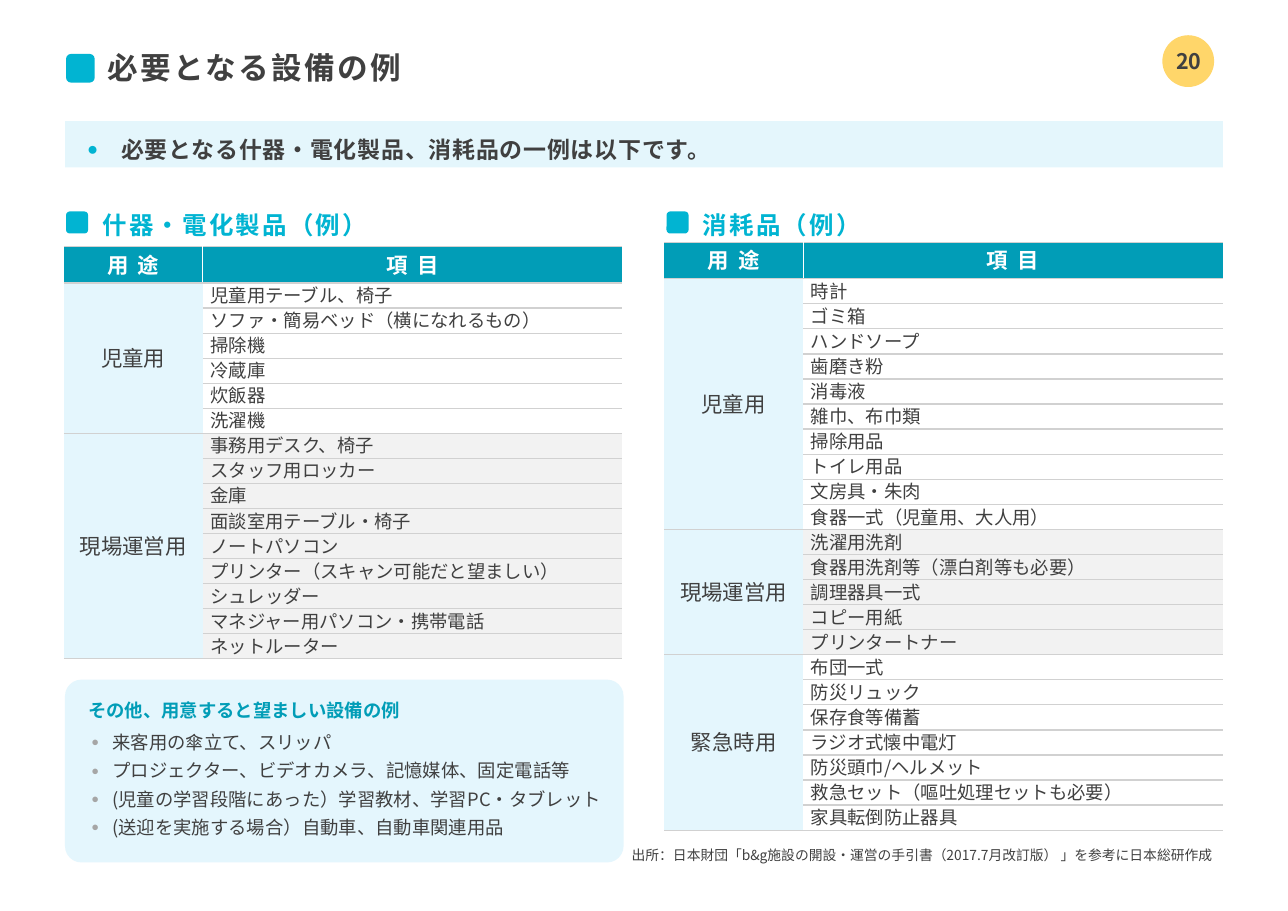
from dataclasses import dataclass
from typing import Optional

from lxml.etree import SubElement
from pptx import Presentation
from pptx.dml.color import RGBColor
from pptx.enum.shapes import MSO_SHAPE as Shape
from pptx.enum.text import MSO_ANCHOR as Anchor, PP_ALIGN as Align
from pptx.oxml.ns import qn
from pptx.util import Emu, Inches, Pt

FONT = "Noto Sans CJK JP"
NO_TABLE_STYLE = "{2D5ABB26-0587-4C30-8999-92F81FD0307C}"
CYAN = RGBColor(0x01, 0xB4, 0xD2)
TEAL = RGBColor(0x01, 0x9D, 0xB7)
BANNER = RGBColor(0xCA, 0xEE, 0xFB)
PALE_BLUE = RGBColor(0xE4, 0xF6, 0xFD)
YELLOW = RGBColor(0xFF, 0xD6, 0x6A)
INK = RGBColor(0x40, 0x40, 0x40)
WHITE = RGBColor(0xFF, 0xFF, 0xFF)
LIGHT_GRAY = RGBColor(0xF2, 0xF2, 0xF2)
RULE_GRAY = RGBColor(0xD1, 0xD1, 0xD1)
BULLET_GRAY = RGBColor(0xA6, 0xA6, 0xA6)

# Two equal columns; lengths in inches
MARGIN, COLUMN_PITCH, COLUMN_WIDTH = 0.58, 5.45, 5.07
LABEL_WIDTH, HEADER_HEIGHT = 1.26, 0.33


@dataclass(frozen=True)
class Bullet:
    color: RGBColor
    percent: int
    indent: float


@dataclass(frozen=True)
class Style:
    size: float
    color: RGBColor = INK
    bold: bool = False
    tracking: float = 0
    line: float = 1.0
    align: Align = Align.LEFT
    bullet: Optional[Bullet] = None
    gap: float = 0


@dataclass(frozen=True)
class Group:
    label: str
    items: list[str]
    fill: RGBColor


@dataclass(frozen=True)
class Panel:
    column: int
    top: float
    height: float
    heading: str
    groups: list[Group]


TITLE = Style(20, bold=True, tracking=1.5, line=0.9)
PAGE_NUMBER = Style(14, bold=True, align=Align.CENTER)
LEAD = Style(15, bold=True, tracking=0.5, line=1.2, bullet=Bullet(CYAN, 80, 0.31))
HEADING = Style(16, CYAN, True, 1.5, 1.3)
HEADER = Style(14, WHITE, True, 6, 0.9, Align.CENTER)
LABEL = Style(14, line=0.9, align=Align.CENTER)
ITEM = Style(12, line=0.9)
SOURCE = Style(9, line=1.3, align=Align.RIGHT)
NOTE_HEADING = Style(12, TEAL, True, line=1.1)
NOTE = Style(12, bullet=Bullet(BULLET_GRAY, 70, 0.19), gap=2)

PANELS = [
    Panel(0, 2.24, 3.74, "什器・電化製品（例）", [
        Group("児童用", ["児童用テーブル、椅子", "ソファ・簡易ベッド（横になれるもの）", "掃除機",
                      "冷蔵庫", "炊飯器", "洗濯機"], WHITE),
        Group("現場運営用", ["事務用デスク、椅子", "スタッフ用ロッカー", "金庫",
                        "面談室用テーブル・椅子", "ノートパソコン",
                        "プリンター（スキャン可能だと望ましい）", "シュレッダー",
                        "マネジャー用パソコン・携帯電話", "ネットルーター"], LIGHT_GRAY)]),
    Panel(1, 2.2, 5.34, "消耗品（例）", [
        Group("児童用", ["時計", "ゴミ箱", "ハンドソープ", "歯磨き粉", "消毒液", "雑巾、布巾類",
                      "掃除用品", "トイレ用品", "文房具・朱肉", "食器一式（児童用、大人用）"], WHITE),
        Group("現場運営用", ["洗濯用洗剤", "食器用洗剤等（漂白剤等も必要）", "調理器具一式",
                        "コピー用紙", "プリンタートナー"], LIGHT_GRAY),
        Group("緊急時用", ["布団一式", "防災リュック", "保存食等備蓄", "ラジオ式懐中電灯",
                       "防災頭巾/ヘルメット", "救急セット（嘔吐処理セットも必要）",
                       "家具転倒防止器具"], WHITE)]),
]
NOTES = ["来客用の傘立て、スリッパ", "プロジェクター、ビデオカメラ、記憶媒体、固定電話等",
         "(児童の学習段階にあった）学習教材、学習PC・タブレット", "(送迎を実施する場合）自動車、自動車関連用品"]


def write(frame, lines: list[str], style: Style, insets=(0, 0, 0, 0)) -> None:
    frame.word_wrap = True
    frame.margin_left, frame.margin_top, frame.margin_right, frame.margin_bottom = map(Inches, insets)
    for index, line in enumerate(lines):
        paragraph = frame.add_paragraph() if index else frame.paragraphs[0]
        paragraph.text = line
        format_paragraph(paragraph, style, first=index == 0)


def format_paragraph(paragraph, style: Style, first: bool = True) -> None:
    paragraph.alignment = style.align
    paragraph.line_spacing = style.line
    paragraph.space_before = Pt(0 if first else style.gap)
    paragraph.space_after = Pt(style.gap)
    properties = paragraph._p.get_or_add_pPr()
    if style.bullet:
        indent = Inches(style.bullet.indent)
        properties.set("marL", str(indent))
        properties.set("indent", str(-indent))
        color = SubElement(properties, qn("a:buClr"))
        SubElement(color, qn("a:srgbClr"), val=str(style.bullet.color))
        SubElement(properties, qn("a:buSzPct"), val=str(style.bullet.percent * 1000))
        SubElement(properties, qn("a:buFont"), typeface="Arial")
        SubElement(properties, qn("a:buChar"), char="●")
    font = paragraph.font
    font.size, font.bold, font.name = Pt(style.size), style.bold, FONT
    font.color.rgb = style.color
    defaults = properties.find(qn("a:defRPr"))
    defaults.set("spc", str(round(style.tracking * 100)))
    SubElement(defaults, qn("a:ea"), typeface=FONT)


def add_block(slide, kind: Shape, box: tuple, fill: RGBColor):
    shape = slide.shapes.add_shape(kind, *map(Inches, box))
    shape.shadow.inherit = False
    shape.fill.solid()
    shape.fill.fore_color.rgb = fill
    shape.line.fill.background()
    return shape


def add_text(slide, box: tuple, lines: list[str], style: Style,
             anchor: Anchor = Anchor.TOP) -> None:
    frame = slide.shapes.add_textbox(*map(Inches, box)).text_frame
    frame.vertical_anchor = anchor
    write(frame, lines, style)


def add_border(cell, side: str, color: RGBColor, width: float) -> None:
    line = SubElement(cell._tc.get_or_add_tcPr(), qn(f"a:{side}"), w=str(Pt(width)))
    SubElement(SubElement(line, qn("a:solidFill")), qn("a:srgbClr"), val=str(color))


def fill_cell(cell, text: str, style: Style, fill: RGBColor, side: float = 0, edge: str = "") -> None:
    """Write and colour a ruled cell; edge names a side with a white line."""
    write(cell.text_frame, [text], style)
    cell.margin_left = cell.margin_right = Inches(side)
    cell.margin_top = cell.margin_bottom = 0
    cell.vertical_anchor = Anchor.MIDDLE
    if edge:
        add_border(cell, edge, WHITE, 0.75)
    for rule in ("lnT", "lnB"):
        add_border(cell, rule, RULE_GRAY, 1)
    cell.fill.solid()
    cell.fill.fore_color.rgb = fill


def add_panel(slide, panel: Panel) -> None:
    left = MARGIN + panel.column * COLUMN_PITCH
    add_text(slide, (left + 0.35, 1.88, 2.86, 0.24), [panel.heading], HEADING, Anchor.MIDDLE)
    add_block(slide, Shape.ROUNDED_RECTANGLE, (left + 0.02, 1.92, 0.2, 0.2), CYAN)

    count = sum(len(group.items) for group in panel.groups)
    box = (left, panel.top, COLUMN_WIDTH, panel.height)
    table = slide.shapes.add_table(count + 1, 2, *map(Inches, box)).table
    table.first_row = table.horz_banding = False
    table._tbl.tblPr.find(qn("a:tableStyleId")).text = NO_TABLE_STYLE
    table.columns[0].width = Inches(LABEL_WIDTH)
    table.columns[1].width = Inches(COLUMN_WIDTH - LABEL_WIDTH)
    for row in table.rows:
        row.height = Emu(Inches(panel.height - HEADER_HEIGHT) // count)
    table.rows[0].height = Inches(HEADER_HEIGHT)

    fill_cell(table.cell(0, 0), "用途", HEADER, TEAL, 0.16, "lnR")
    fill_cell(table.cell(0, 1), "項目", HEADER, TEAL, 0.16, "lnL")
    start = 1
    for group in panel.groups:
        end = start + len(group.items) - 1
        table.cell(start, 0).merge(table.cell(end, 0))
        fill_cell(table.cell(start, 0), group.label, LABEL, PALE_BLUE)
        add_border(table.cell(end, 0), "lnB", RULE_GRAY, 1)
        for row, item in enumerate(group.items, start):
            fill_cell(table.cell(row, 1), item, ITEM, group.fill, 0.07)
        start = end + 1


def main() -> None:
    presentation = Presentation()
    presentation.slide_width, presentation.slide_height = Inches(11.69), Inches(8.27)
    slide = presentation.slides.add_slide(presentation.slide_layouts[6])

    add_block(slide, Shape.OVAL, (10.55, 0.32, 0.47, 0.47), YELLOW)
    add_block(slide, Shape.ROUNDED_RECTANGLE, (0.6, 0.49, 0.26, 0.26), CYAN)
    add_text(slide, (0.98, 0.48, 9.03, 0.31), ["必要となる設備の例"], TITLE, Anchor.MIDDLE)
    add_text(slide, (10.58, 0.33, 0.42, 0.44), ["20"], PAGE_NUMBER, Anchor.MIDDLE)

    banner = add_block(slide, Shape.RECTANGLE, (0.59, 1.1, 10.51, 0.42), BANNER)
    SubElement(banner._element.spPr.find(".//" + qn("a:srgbClr")), qn("a:alpha"), val="50000")
    banner.height = Inches(0.42)
    banner.text_frame.vertical_anchor = Anchor.TOP
    write(banner.text_frame, ["必要となる什器・電化製品、消耗品の一例は以下です。"], LEAD, (0.2, 0.08, 0.2, 0))

    for panel in PANELS:
        add_panel(slide, panel)

    add_text(slide, (1.3, 7.64, 9.7, 0.18),
             ["出所：日本財団「b&g施設の開設・運営の手引書（2017.7月改訂版） 」を参考に日本総研作成"], SOURCE)
    note_box = add_block(slide, Shape.ROUNDED_RECTANGLE, (0.59, 6.17, COLUMN_WIDTH, 1.66), PALE_BLUE)
    note_box.adjustments[0] = 0.09
    add_text(slide, (0.83, 6.64, 4.79, 1.08), NOTES, NOTE)
    add_text(slide, (0.8, 6.33, 3.58, 0.18), ["その他、用意すると望ましい設備の例"], NOTE_HEADING)
    presentation.save("out.pptx")


if __name__ == "__main__":
    main()
